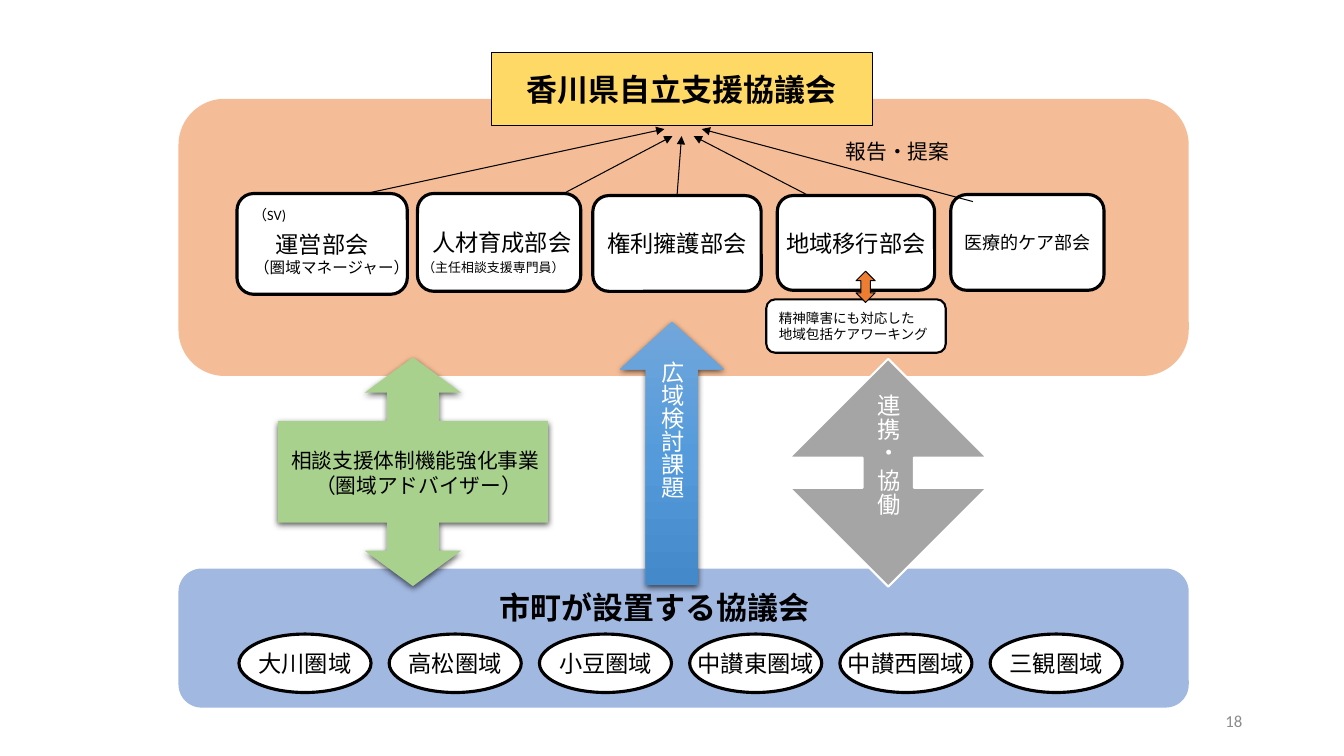
import pptx
import pptx.dml.color
import pptx.enum.dml
import pptx.enum.shapes
import pptx.enum.text
import pptx.oxml
import pptx.oxml.ns
import pptx.util
from copy import deepcopy

Inches = pptx.util.Inches
Pt = pptx.util.Pt
qn = pptx.oxml.ns.qn
SHAPES = pptx.enum.shapes.MSO_SHAPE
ANCHOR = pptx.enum.text.MSO_ANCHOR
LEFT, CENTER, RIGHT = (pptx.enum.text.PP_ALIGN.LEFT,
                       pptx.enum.text.PP_ALIGN.CENTER,
                       pptx.enum.text.PP_ALIGN.RIGHT)

# Content
COLORS = {
    "black": "000000", "white": "FFFFFF", "municipal": "4472C4",
    "orange": "ED7D31", "green": "A9D18E", "gold": "FFD966",
    "gray": "A5A5A5", "number": "8C8C8C",
}
ARROW_GRADIENT = ["71A6DB", "559BDB", "448ACA"]
TITLE = "香川県自立支援協議会"
PANELS = [  # box, colour
    ((1.77, 5.64, 10.02, 1.38), "municipal"),
    ((1.77, 0.98, 10.02, 2.75), "orange"),
]
COMMITTEES = [  # name, box, text size, alignment
    ("運営部会", (2.35, 1.92, 1.69, 1), 16.6, CENTER),
    ("人材育成部会", (4.14, 1.92, 1.62, 0.97), 16.6, LEFT),
    ("権利擁護部会", (5.88, 1.94, 1.67, 0.95), 16.6, CENTER),
    ("地域移行部会", (7.71, 1.94, 1.56, 0.94), 16.6, CENTER),
    ("医療的ケア部会", (9.43, 1.93, 1.52, 0.95), 12.9, CENTER),
]
REPORT_LINES = [  # start, end: one per committee
    ((3.63, 1.92), (6.59, 1.28)),
    ((5.59, 1.92), (6.67, 1.35)),
    ((6.72, 1.94), (6.76, 1.35)),
    ((8, 1.93), (6.88, 1.35)),
    ((9.65, 2), (6.96, 1.28)),
]
CENTER_COMMITTEE = 2
WORKING_GROUP = ["精神障害にも対応した", "地域包括ケアワーキング"]
AREAS = ["大川圏域", "高松圏域", "小豆圏域", "中讃東圏域", "中讃西圏域", "三観圏域"]
AREA_LEFT, AREA_TOP, AREA_STEP = 2.37, 6.29, 1.49
LABELS = [  # lines, box, size, alignments, wraps, anchor
    (["報告・提案"], (8.29, 1.28, 1.16, 0.44), 14.8, [LEFT], False, ANCHOR.MIDDLE),
    (["（主任相談支援専門員）"], (4.09, 2.53, 1.72, 0.26), 9.2, [LEFT], True, ANCHOR.TOP),
    (["（圏域マネージャー）"], (2.35, 2.51, 1.88, 0.29), 11.1, [CENTER], True, ANCHOR.TOP),
    (["（SV)"], (2.41, 2, 0.65, 0.27), 10.2, [LEFT], True, ANCHOR.TOP),
    (["相談支援体制機能強化事業", "（圏域アドバイザー）"], (2.79, 4.39, 2.72, 0.6), 14.8,
     [LEFT, CENTER], True, ANCHOR.TOP),
]

presentation = pptx.Presentation()
presentation.slide_width, presentation.slide_height = Inches(13.33), Inches(7.5)
slide = presentation.slides.add_slide(presentation.slide_layouts[5])


def rgb(name):
    return pptx.dml.color.RGBColor.from_string(COLORS.get(name, name))


def set_text(shape, lines, size, alignments=(CENTER,), color="black", bold=False,
             wrap=False, anchor=ANCHOR.MIDDLE):
    frame = shape.text_frame
    frame.text = "\n".join(lines)
    frame.word_wrap = wrap
    frame.vertical_anchor = anchor
    frame.auto_size = pptx.enum.text.MSO_AUTO_SIZE.NONE
    for index, paragraph in enumerate(frame.paragraphs):
        paragraph.alignment = alignments[min(index, len(alignments) - 1)]
        paragraph.font.name = "Calibri"
        paragraph.font.size = Pt(size)
        paragraph.font.bold = bold
        paragraph.font.color.rgb = rgb(color)


def paint(shape, fill, line=None, width=0.75):
    shape.fill.solid()
    shape.fill.fore_color.rgb = rgb(fill)
    if line:
        shape.line.color.rgb = rgb(line)
        shape.line.width = Pt(width)
    else:
        shape.line.fill.background()


def add_shape(kind, box, fill, line=None, width=0.75, adjustments=()):
    shape = slide.shapes.add_shape(kind, *map(Inches, box))
    shape.shadow.inherit = False
    for index, value in enumerate(adjustments):
        shape.adjustments[index] = value
    paint(shape, fill, line, width)
    return shape


def add_label(lines, box, size, alignments, wrap, anchor, color="black", bold=False):
    label = slide.shapes.add_textbox(*map(Inches, box))
    set_text(label, lines, size, alignments, color, bold, wrap, anchor)


def add_shadow(shape):
    effects = shape._element.spPr.find(qn("a:effectLst"))
    effects.append(pptx.oxml.parse_xml(
        f'<a:outerShdw {pptx.oxml.ns.nsdecls("a")} blurRad="57150" dist="19050" '
        'dir="5400000" algn="ctr" rotWithShape="0"><a:srgbClr val="000000">'
        '<a:alpha val="63000"/></a:srgbClr></a:outerShdw>'))


def set_vertical(shape):
    shape.text_frame._txBody.bodyPr.set("vert", "eaVert")


# Half-transparent background panels
for box, color in PANELS:
    panel = add_shape(SHAPES.ROUNDED_RECTANGLE, box, color)
    fill_color = panel._element.spPr.find(qn("a:solidFill"))[0]
    fill_color.append(fill_color.makeelement(qn("a:alpha"), {"val": "50000"}))

# Green two-way callout
advisers = add_shape(SHAPES.LEFT_RIGHT_ARROW_CALLOUT, (2.96, 3.34, 2.27, 2.68), "green",
                     adjustments=(0.226, 0.211, 0.155, 0.445))
advisers.rotation = 90
add_shadow(advisers)

# Committees and their reporting arrows
for index, ((name, box, size, alignment), (start, end)) in enumerate(
        zip(COMMITTEES, REPORT_LINES)):
    committee = add_shape(SHAPES.ROUNDED_RECTANGLE, box, "white", "black", 2.25)
    set_text(committee, [name], size, [alignment])
    arrow = slide.shapes.add_connector(pptx.enum.shapes.MSO_CONNECTOR.STRAIGHT,
                                       *map(Inches, start + end))
    if index == CENTER_COMMITTEE:
        arrow.begin_connect(committee, 0)
    arrow.line.color.rgb = rgb("black")
    arrow.line.width = Pt(0.75)
    outline = arrow.line._get_or_add_ln()
    outline.append(outline.makeelement(qn("a:tailEnd"), {"type": "triangle"}))
    properties = arrow._element.spPr
    properties.append(properties.makeelement(qn("a:effectLst"), {}))

# Title in a rounded box, in front of the panel
title = slide.shapes.title
title.left, title.top, title.width, title.height = map(Inches, (4.87, 0.52, 3.78, 0.73))
title._element.spPr.append(pptx.oxml.parse_xml(
    f'<a:prstGeom {pptx.oxml.ns.nsdecls("a")} prst="roundRect"><a:avLst/></a:prstGeom>'))
paint(title, "gold", "black")
set_text(title, [TITLE], 22.1, bold=True)
slide.shapes._spTree.append(title._element)

# Working group under the fourth committee
working_group = add_shape(SHAPES.ROUNDED_RECTANGLE, (7.6, 2.97, 1.78, 0.53),
                          "white", "black", 1.5)
set_text(working_group, WORKING_GROUP, 9.7, [LEFT])
add_shape(SHAPES.UP_DOWN_ARROW, (8.49, 2.69, 0.19, 0.31), "orange", "black")

# Large arrows between the panels
cooperation = add_shape(SHAPES.UP_DOWN_ARROW, (7.83, 3.56, 1.96, 2.26), "gray", "white", 1.5,
                        adjustments=(0.5, 0.26))
set_text(cooperation, ["連携・ 協働"], 16.6, color="white")
cooperation.text_frame.margin_bottom = Inches(0.37)
set_vertical(cooperation)

issues = add_shape(SHAPES.UP_ARROW, (6.15, 3.19, 1.03, 2.61), "white",
                   adjustments=(0.5, 0.461))
issues.fill.gradient()
issues.fill.gradient_angle = 270
stops = issues._element.spPr.find(qn("a:gradFill")).find(qn("a:gsLst"))
stops.insert(1, deepcopy(stops[0]))
for index, (stop, color) in enumerate(zip(issues.fill.gradient_stops, ARROW_GRADIENT)):
    stop.color.rgb = rgb(color)
    stop.position = index / 2
add_shadow(issues)
set_text(issues, ["広域検討課題"], 16.6, color="white")
issues.text_frame.margin_top = Inches(0.15)
set_vertical(issues)

# Municipal councils
add_label(["市町が設置する協議会"], (4.78, 5.84, 3.42, 0.37), 22.1, [CENTER], False,
          ANCHOR.MIDDLE, bold=True)
for index, area in enumerate(AREAS):
    oval = add_shape(SHAPES.OVAL, (AREA_LEFT + index * AREA_STEP, AREA_TOP, 1.31, 0.58),
                     "white", "black", 2.25)
    set_text(oval, [area], 16.6)

# Labels and page number
for label in LABELS:
    add_label(*label)
add_label(["18"], (9.42, 6.95, 3, 0.4), 12, [RIGHT], True, ANCHOR.MIDDLE, "number")

presentation.save("out.pptx")
